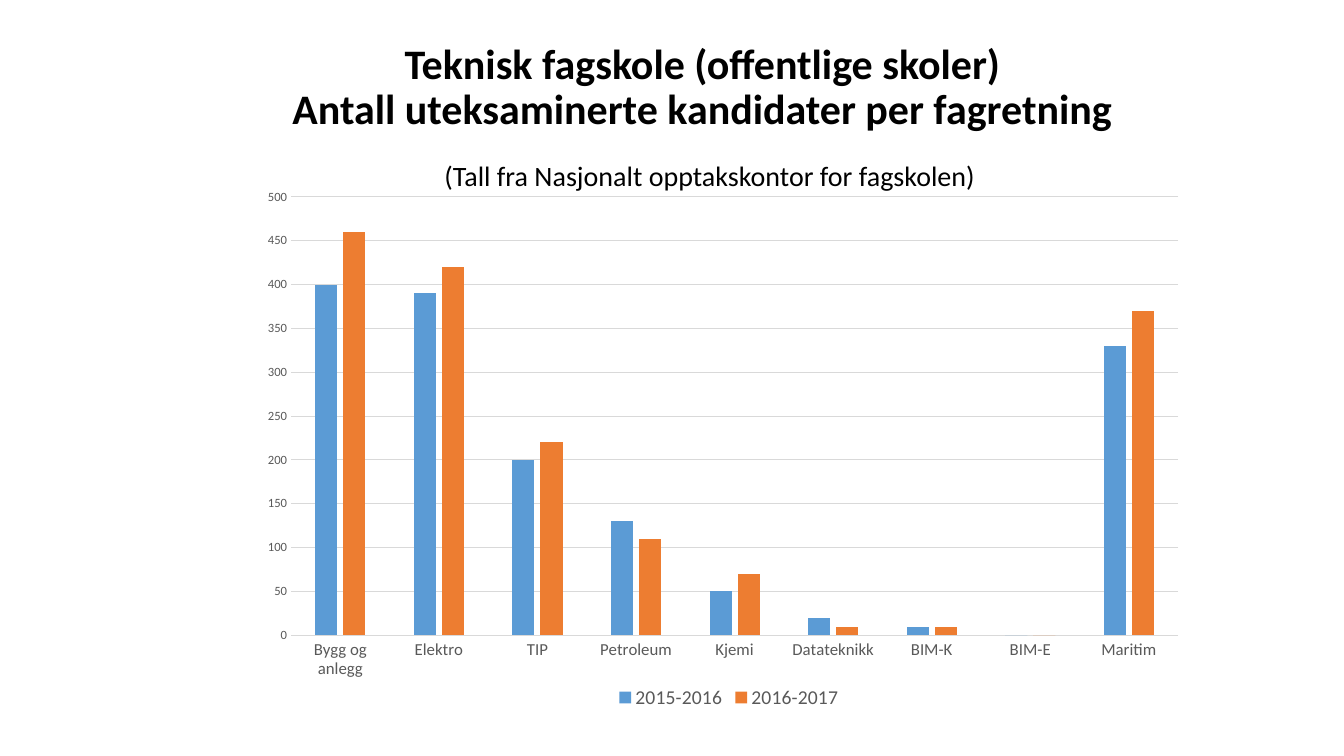
"""Build a slide that compares graduates per subject over two school years."""
from dataclasses import dataclass
from typing import Any

from lxml.etree import SubElement
from pptx import Presentation
from pptx.chart.chart import Chart
from pptx.chart.data import CategoryChartData as ChartData
from pptx.dml.color import RGBColor
from pptx.enum.chart import XL_CHART_TYPE as ChartType
from pptx.enum.chart import XL_LEGEND_POSITION as LegendPosition
from pptx.enum.chart import XL_TICK_MARK as TickMark
from pptx.enum.text import MSO_ANCHOR as Anchor
from pptx.enum.text import PP_ALIGN as Align
from pptx.oxml.ns import qn
from pptx.slide import Slide
from pptx.util import Inches, Pt

WIDTH, HEIGHT = Inches(13.33), Inches(7.5)
FONT = "Calibri"
COLOURS = {"text": "000000", "label": "595959", "grid": "D9D9D9",
           "blue": "5B9BD5", "orange": "ED7D31"}


@dataclass(frozen=True)
class Area:
    """Position and size in percent of the surrounding frame."""
    left: float
    top: float
    width: float
    height: float

    def on_slide(self) -> tuple[int, int, int, int]:
        """Return the area as slide lengths."""
        return (int(WIDTH * self.left / 100), int(HEIGHT * self.top / 100),
                int(WIDTH * self.width / 100), int(HEIGHT * self.height / 100))


@dataclass(frozen=True)
class Heading:
    """One centred line of the heading."""
    text: str
    size: float
    bold: bool
    space_before: float = 0
    indent: float = 0


@dataclass(frozen=True)
class SchoolYear:
    """Graduates per subject in one school year."""
    name: str
    colour: str
    graduates: tuple[int, ...]


HEADING_AREA = Area(11.4, 5.33, 81.77, 15.6)
CHART_AREA = Area(19.05, 24.93, 70.37, 69.47)
PLOT_AREA = Area(3.7, 1.6, 93.8, 83.5)
HEADINGS = (
    Heading("Teknisk fagskole (offentlige skoler)", 30, True),
    Heading("Antall uteksaminerte kandidater per fagretning", 30, True),
    Heading("(Tall fra Nasjonalt opptakskontor for fagskolen)", 20, False, 20, 10),
)
SUBJECTS = ("Bygg og anlegg", "Elektro", "TIP", "Petroleum", "Kjemi",
            "Datateknikk", "BIM-K", "BIM-E", "Maritim")
YEARS = (
    SchoolYear("2015-2016", "blue", (400, 390, 200, 130, 50, 20, 10, 0, 330)),
    SchoolYear("2016-2017", "orange", (460, 420, 220, 110, 70, 10, 10, 0, 370)),
)


def apply(target: Any, **values: Any) -> None:
    """Set each named attribute on the target."""
    for name, value in values.items():
        setattr(target, name, value)


def style_font(font: Any, size: float, colour: str, bold: bool = False) -> None:
    """Give a font its face, size, weight and colour."""
    apply(font, name=FONT, size=Pt(size), bold=bold)
    font.color.rgb = RGBColor.from_string(COLOURS[colour])


def style_line(line: Any) -> None:
    """Draw a thin grid-coloured line."""
    line.width = Pt(0.75)
    line.color.rgb = RGBColor.from_string(COLOURS["grid"])


def add_headings(page: Slide) -> None:
    """Add the heading lines in one text box."""
    frame = page.shapes.add_textbox(*HEADING_AREA.on_slide()).text_frame
    apply(frame, word_wrap=True, vertical_anchor=Anchor.TOP, margin_top=Inches(0.03))
    for index, heading in enumerate(HEADINGS):
        para = frame.add_paragraph() if index else frame.paragraphs[0]
        apply(para, alignment=Align.CENTER, line_spacing=0.9,
              space_before=Pt(heading.space_before))
        para._p.get_or_add_pPr().set("marL", str(Pt(heading.indent)))
        span = para.add_run()
        span.text = heading.text
        style_font(span.font, heading.size, "text", heading.bold)


def place_plot(chart: Chart, area: Area) -> None:
    """Fix the inner plot area within the chart."""
    plot_area = chart.element.find(".//" + qn("c:plotArea"))
    for old in plot_area.findall(qn("c:layout")):
        plot_area.remove(old)
    layout = SubElement(plot_area, qn("c:layout"))
    plot_area.insert(0, layout)
    manual = SubElement(layout, qn("c:manualLayout"))
    settings = {"layoutTarget": "inner", "xMode": "edge", "yMode": "edge",
                "x": area.left / 100, "y": area.top / 100,
                "w": area.width / 100, "h": area.height / 100}
    for name, value in settings.items():
        SubElement(manual, qn(f"c:{name}")).set("val", str(value))


def add_graduates_chart(page: Slide) -> None:
    """Add the clustered columns with axes and legend."""
    data = ChartData()
    data.categories = SUBJECTS
    for year in YEARS:
        data.add_series(year.name, year.graduates)
    chart = page.shapes.add_chart(ChartType.COLUMN_CLUSTERED,
                                  *CHART_AREA.on_slide(), data).chart
    apply(chart, has_title=False, has_legend=True)
    style_font(chart.font, 10, "text")
    apply(chart.legend, position=LegendPosition.BOTTOM, include_in_layout=False)
    style_font(chart.legend.font, 14, "label")

    plot = chart.plots[0]
    apply(plot, gap_width=219, overlap=-27, vary_by_categories=False)
    for series, year in zip(plot.series, YEARS):
        series.format.fill.solid()
        series.format.fill.fore_color.rgb = RGBColor.from_string(COLOURS[year.colour])

    for axis, size in ((chart.category_axis, 12), (chart.value_axis, 9)):
        apply(axis, major_tick_mark=TickMark.NONE, minor_tick_mark=TickMark.NONE)
        style_font(axis.tick_labels.font, size, "label")
    style_line(chart.category_axis.format.line)
    apply(chart.value_axis, minimum_scale=0, maximum_scale=500, major_unit=50)
    chart.value_axis.format.line.fill.background()
    style_line(chart.value_axis.major_gridlines.format.line)
    place_plot(chart, PLOT_AREA)


def main() -> None:
    """Build and save the deck."""
    deck = Presentation()
    apply(deck, slide_width=WIDTH, slide_height=HEIGHT)
    page = deck.slides.add_slide(deck.slide_layouts[6])
    add_headings(page)
    add_graduates_chart(page)
    deck.save("out.pptx")


if __name__ == "__main__":
    main()
